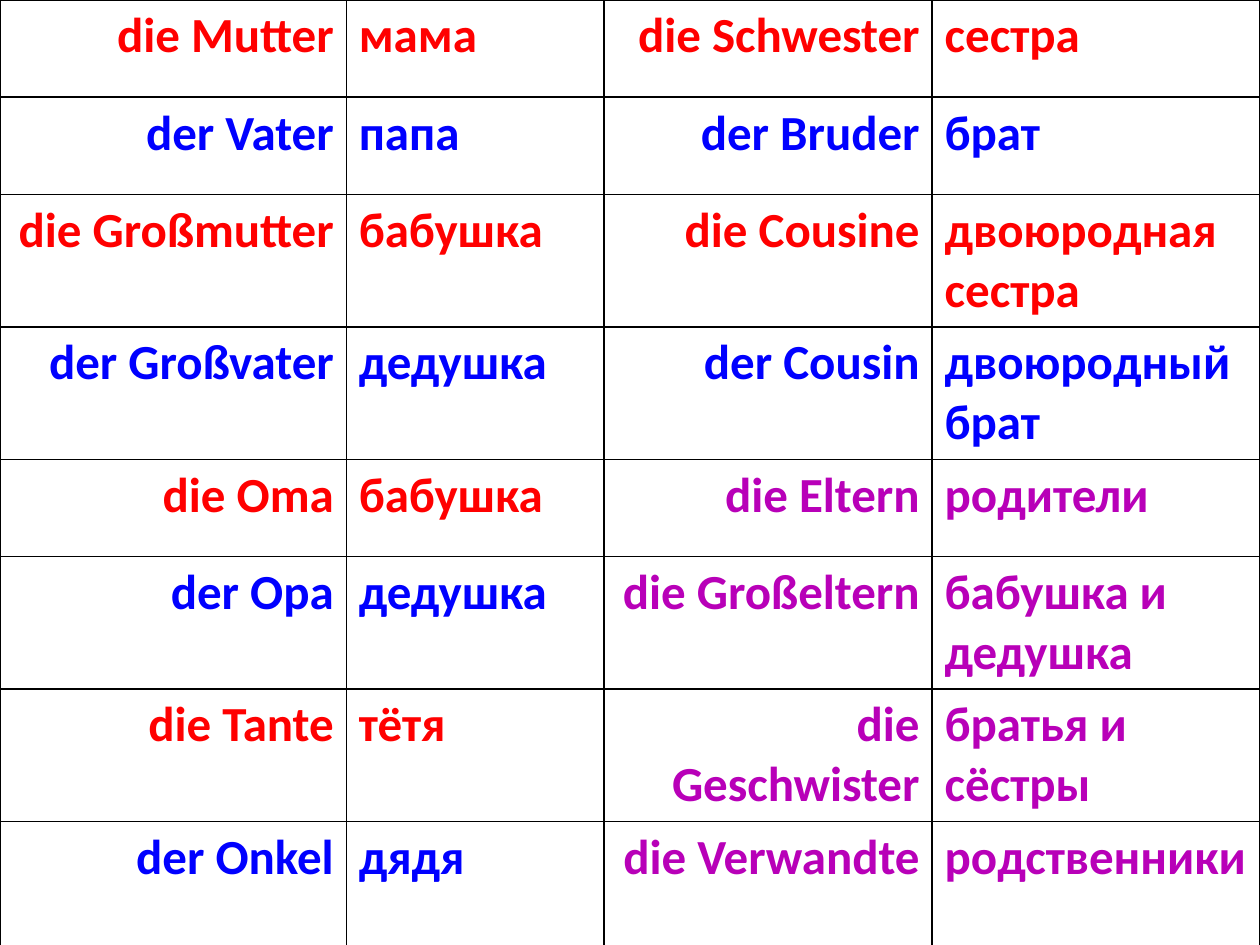
from dataclasses import dataclass
from itertools import chain
from lxml.etree import SubElement as Sub
from pptx import Presentation
from pptx.dml.color import RGBColor as Rgb
from pptx.enum.text import PP_ALIGN as Al
from pptx.oxml.ns import qn
from pptx.util import Cm, Pt


@dataclass
class Theme:
    font: str = "Calibri"
    size: int = 28
    fem: str = "FF0000"
    masc: str = "0000FF"
    many: str = "B800B8"
    line: str = "000000"
    edge: int = 1


theme = Theme()
left = [
    ("die Mutter", "мама", theme.fem),
    ("der Vater", "папа", theme.masc),
    ("die Großmutter", "бабушка", theme.fem),
    ("der Großvater", "дедушка", theme.masc),
    ("die Oma", "бабушка", theme.fem),
    ("der Opa", "дедушка", theme.masc),
    ("die Tante", "тётя", theme.fem),
    ("der Onkel", "дядя", theme.masc),
]
right = [
    ("die Schwester", "сестра", theme.fem),
    ("der Bruder", "брат", theme.masc),
    ("die Cousine", "двоюродная сестра", theme.fem),
    ("der Cousin", "двоюродный брат", theme.masc),
    ("die Eltern", "родители", theme.many),
    ("die Großeltern", "бабушка и дедушка", theme.many),
    ("die Geschwister", "братья и сёстры", theme.many),
    ("die Verwandte", "родственники", theme.many),
]
wide = [6.98, 5.2, 6.61, 6.61]
low, high = 1.96, 2.59
tall = [low, low, high, high, low, high, high, high]


def write(cell, text, color, align):
    par = cell.text_frame.paragraphs[0]
    par.alignment = align
    run = par.add_run()
    run.text = text
    font = run.font
    font.name, font.size, font.bold = theme.font, Pt(theme.size), True
    font.color.rgb = Rgb.from_string(color)


def frame(cell):
    props = cell._tc.get_or_add_tcPr()
    for side in ("a:lnL", "a:lnR", "a:lnT", "a:lnB"):
        line = Sub(props, qn(side), w=str(Pt(theme.edge)))
        fill = Sub(line, qn("a:solidFill"))
        Sub(fill, qn("a:srgbClr"), val=theme.line)
    cell.fill.background()


deck = Presentation()
deck.slide_width, deck.slide_height = Cm(25.4), Cm(19.05)
slide = deck.slides.add_slide(deck.slide_layouts[6])
grid = slide.shapes.add_table(
    len(tall), len(wide), Cm(0), Cm(0), Cm(sum(wide)), Cm(sum(tall))
).table
grid.first_row = grid.horz_banding = False
for col, size in zip(grid.columns, wide):
    col.width = Cm(size)
for row, size, pairs in zip(grid.rows, tall, zip(left, right)):
    row.height = Cm(size)
    words = chain.from_iterable(
        ((term, color, Al.RIGHT), (sense, color, Al.LEFT))
        for term, sense, color in pairs
    )
    for cell, (text, color, align) in zip(row.cells, words):
        write(cell, text, color, align)
        frame(cell)

deck.save("out.pptx")
